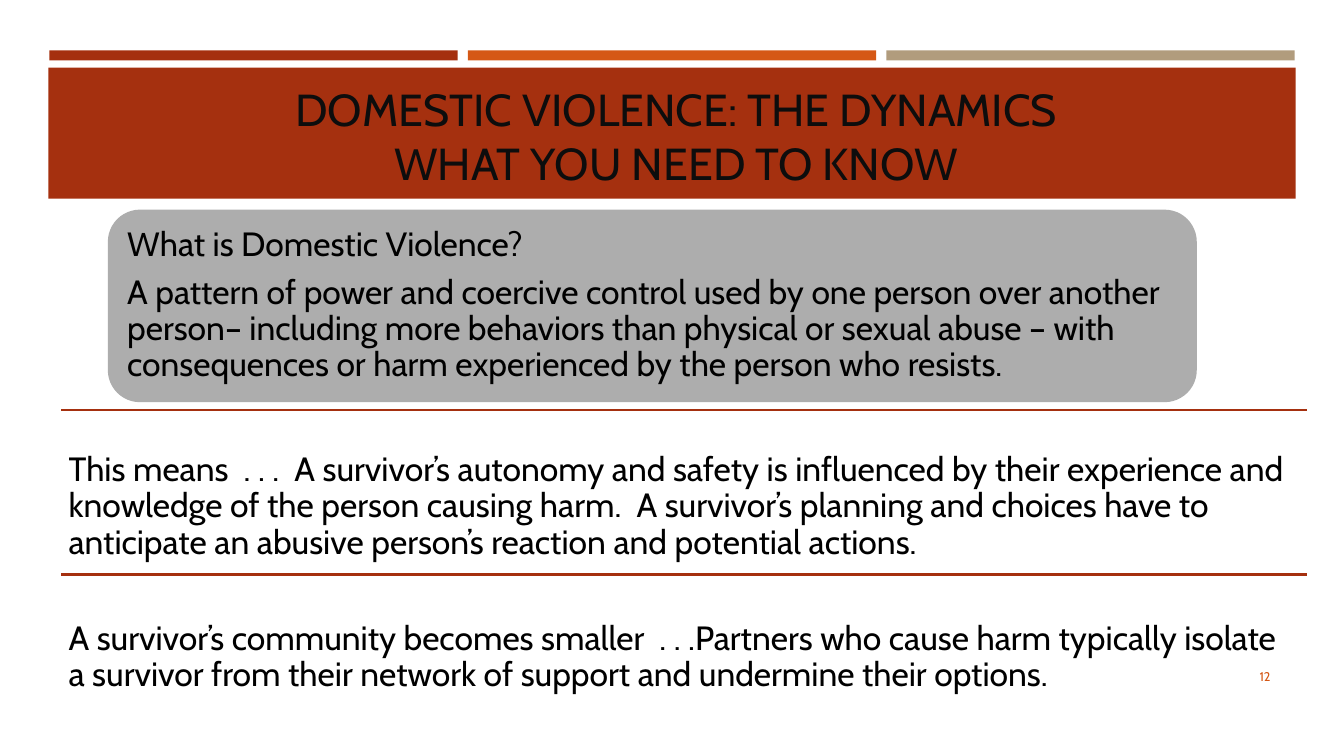
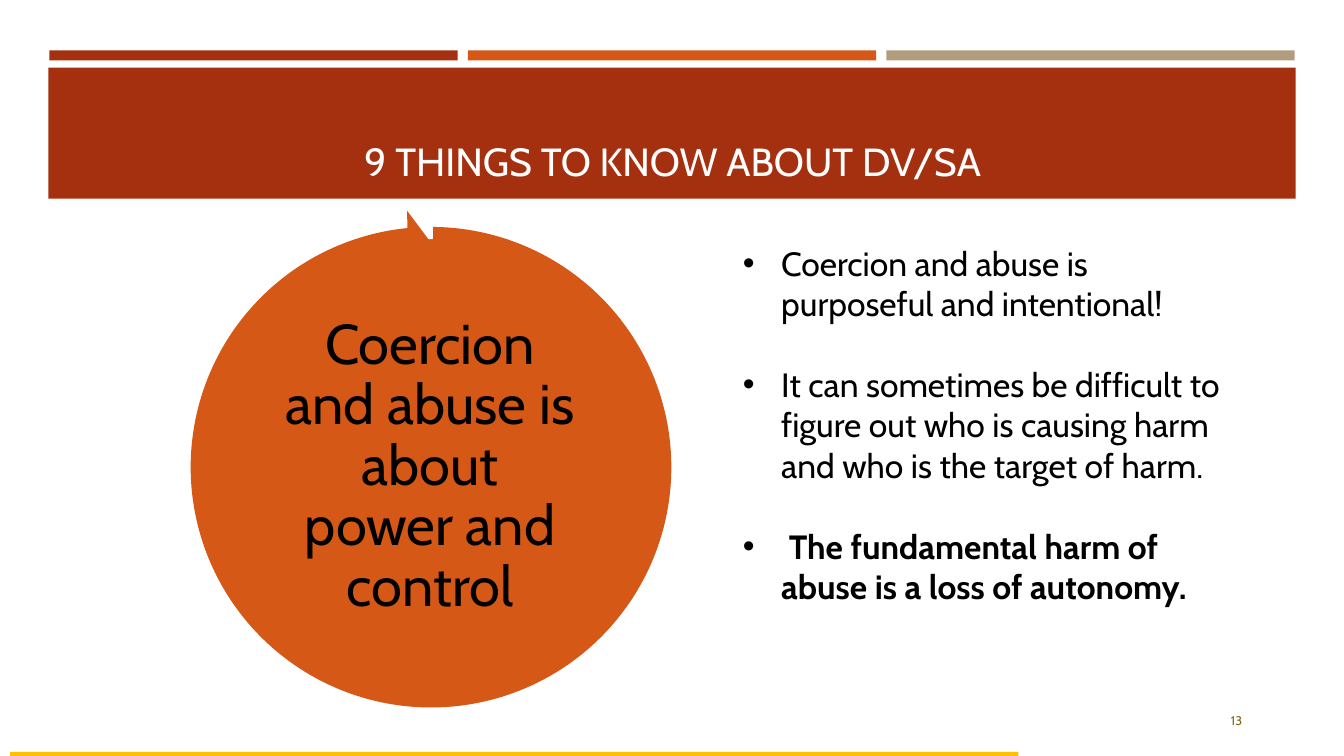
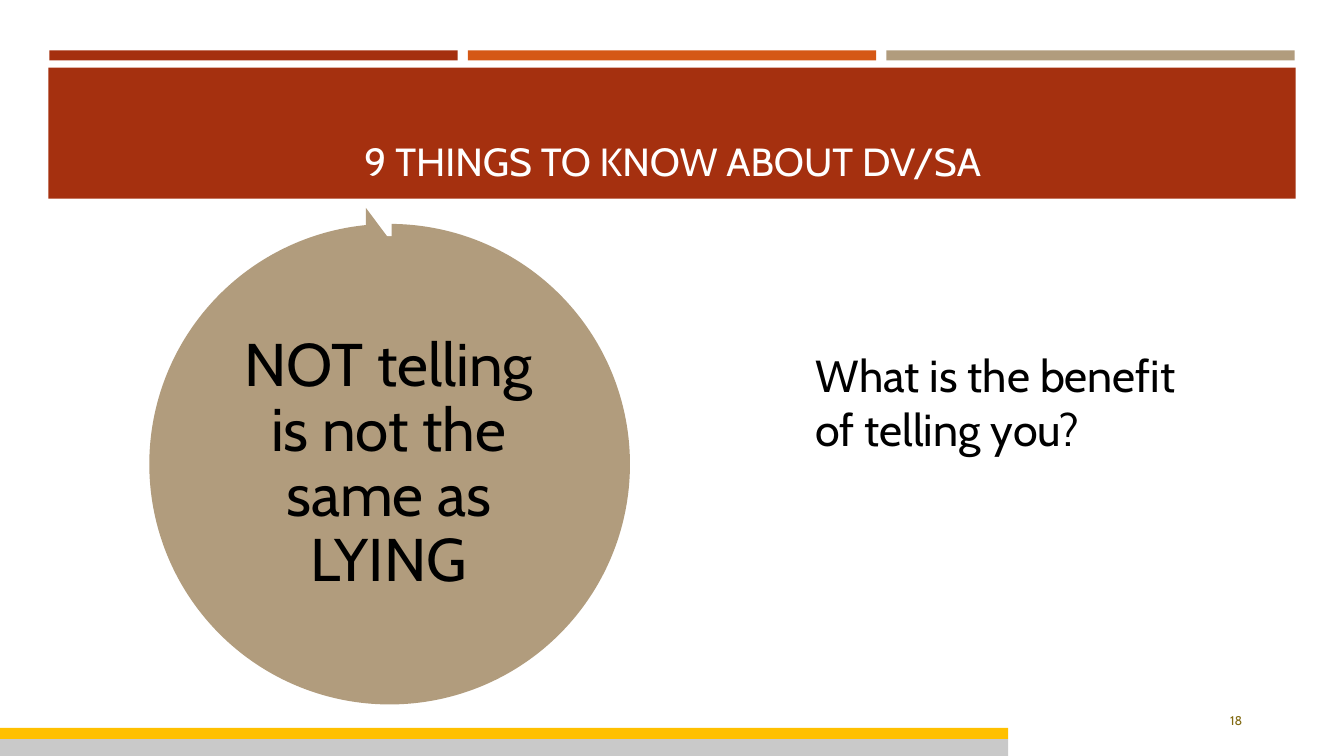
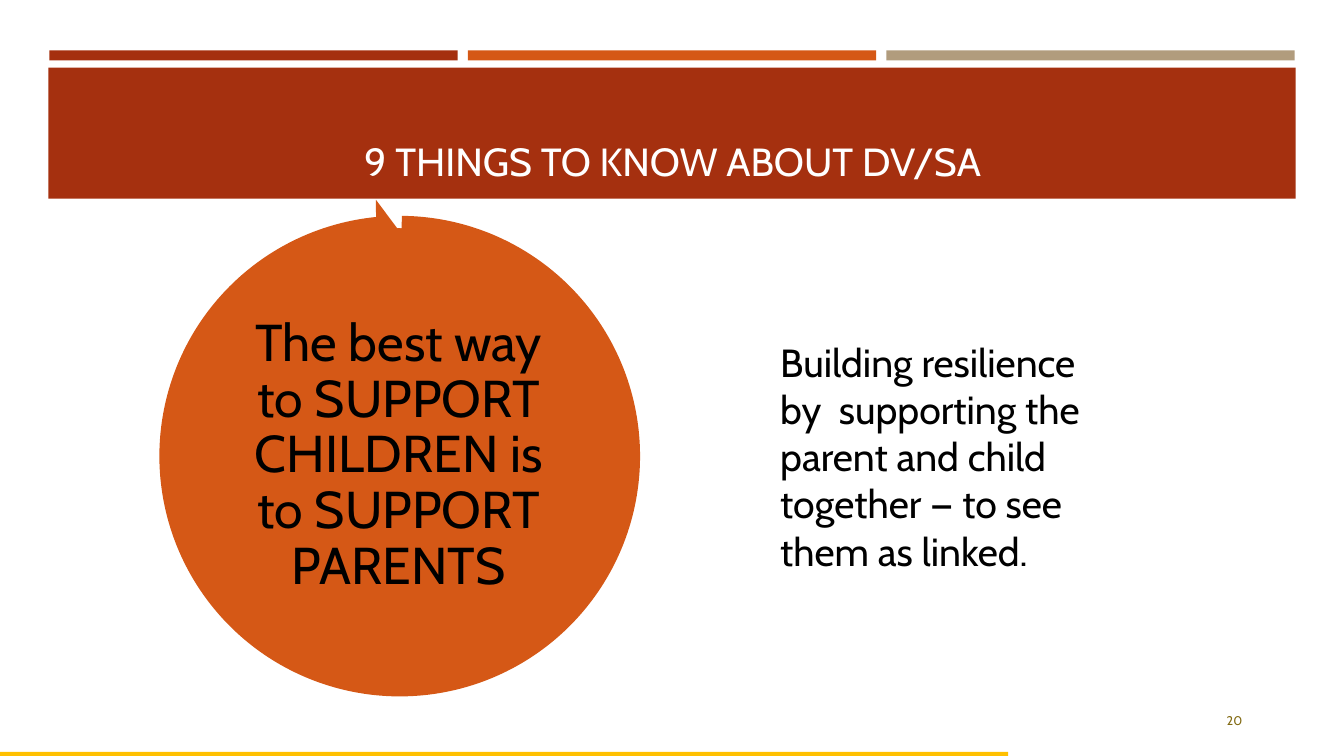
from dataclasses import dataclass

from pptx import Presentation
from pptx.dml.color import RGBColor as Rgb
from pptx.enum.shapes import MSO_CONNECTOR as Conn, MSO_SHAPE as Shape
from pptx.enum.text import MSO_ANCHOR as Anchor, PP_ALIGN as Align
from pptx.oxml.ns import qn
from pptx.util import Inches, Pt
from lxml.etree import SubElement as Sub


@dataclass(frozen=True)
class Theme:
    font: str = "Cabin"
    rust: str = "A5300F"
    orange: str = "D55816"
    tan: str = "B19C7D"
    gold: str = "FFC000"
    olive: str = "826A12"
    gray: str = "ADADAD"
    pale: str = "C9C9C9"
    white: str = "FFFFFF"
    ink: str = "0D0D0D"
    black: str = "000000"
    tiny: int = 9
    body: int = 24
    head: int = 28
    large: int = 32
    rule: float = 1.75
    tight: float = 0.9
    after: int = 8


T = Theme()


def write(frame, text, size=T.body, color=T.black, bold=False, align=Align.LEFT,
          lead=None, before=0, after=0, bullet=False):
    first = not frame.paragraphs[0].runs
    para = frame.paragraphs[0] if first else frame.add_paragraph()
    para.text = text
    para.alignment = align
    para.line_spacing = lead
    para.space_before = Pt(0 if first else before)
    para.space_after = Pt(after)
    if bullet:
        props = para._p.get_or_add_pPr()
        indent = Inches(0.38)
        props.set("marL", str(indent))
        props.set("indent", str(-indent))
        Sub(props, qn("a:buFont")).set("typeface", "Arial")
        Sub(props, qn("a:buChar")).set("char", "•")
    for run in para.runs:
        font = run.font
        font.name = T.font
        font.size = Pt(size)
        font.bold = bold
        font.color.rgb = Rgb.from_string(color)


class Deck:
    def __init__(self):
        self.prs = Presentation()
        self.prs.slide_width = Inches(13.33)
        self.prs.slide_height = Inches(7.5)
        self.slide = None

    def start(self, title, page, size=T.head, color=T.white,
              area=(0.64, 0.77, 12.06, 1.11), spot=(9.42, 6.95, 3, 0.4), tint=T.olive):
        self.slide = self.prs.slides.add_slide(self.prs.slide_layouts[6])
        for i, fill in enumerate((T.rust, T.orange, T.tan)):
            self.form((0.49 + 4.15 * i, 0.5, 4.05, 0.1), fill)
        self.form((0.48, 0.67, 12.37, 1.3), T.rust)
        write(self.box(area, Anchor.BOTTOM), title, size=size, color=color,
              align=Align.CENTER)
        write(self.box(spot, Anchor.MIDDLE), str(page), size=T.tiny, color=tint,
              align=Align.RIGHT)

    def form(self, area, fill, kind=Shape.RECTANGLE):
        shape = self.slide.shapes.add_shape(kind, *map(Inches, area))
        shape.shadow.inherit = False
        shape.fill.solid()
        shape.fill.fore_color.rgb = Rgb.from_string(fill)
        shape.line.fill.background()
        return shape

    def frame(self, shape, anchor, pad=None):
        frame = shape.text_frame
        frame.word_wrap = True
        frame.vertical_anchor = anchor
        if pad is not None:
            frame.margin_left = frame.margin_right = Inches(pad)
            frame.margin_top = frame.margin_bottom = Inches(pad)
        return frame

    def box(self, area, anchor=Anchor.TOP, pad=None):
        shape = self.slide.shapes.add_textbox(*map(Inches, area))
        return self.frame(shape, anchor, pad)

    def panel(self, area, lines):
        shape = self.form(area, T.gray, Shape.ROUNDED_RECTANGLE)
        frame = self.frame(shape, Anchor.MIDDLE, 0.1)
        for line in lines:
            write(frame, line, lead=T.tight, after=T.after)

    def rule(self, y):
        ends = map(Inches, (0.61, y, 12.96, y))
        line = self.slide.shapes.add_connector(Conn.STRAIGHT, *ends)
        line.line.color.rgb = Rgb.from_string(T.rust)
        line.line.width = Pt(T.rule)
        Sub(line._element.spPr, qn("a:effectLst"))

    def point(self, y, top, text):
        self.rule(y)
        write(self.box((0.61, top, 12.35, 1.25), pad=0.07), text, lead=T.tight)

    def bubble(self, x, y, text, size, fill):
        disc = self.form((x, y, 4.55, 4.55), fill, Shape.OVAL)
        disc.line.color.rgb = Rgb.from_string(T.white)
        disc.line.width = Pt(T.rule)
        write(self.frame(disc, Anchor.MIDDLE, 0.15), text, size=size,
              align=Align.CENTER, lead=T.tight, after=T.after)
        ring = self.form((x - 0.27, y - 0.28, 5.11, 5.11), fill, Shape.CIRCULAR_ARROW)
        for i, value in enumerate((0.051, 3.275, 158.427, 162.297, 0.059)):
            ring.adjustments[i] = value

    def strip(self, x, y, height, fill=T.gold):
        self.form((x, y, 10, height), fill)


def main():
    deck = Deck()
    topic = "9 THINGS TO KNOW ABOUT DV/SA"

    deck.start("DOMESTIC VIOLENCE: THE DYNAMICS\vWHAT YOU NEED TO KNOW", 12,
               size=T.large, color=T.ink, area=(2.61, 1, 8.2, 0.93),
               spot=(11.55, 6.51, 1.15, 0.4), tint=T.orange)
    deck.panel((1.07, 2.08, 10.8, 1.91), (
        "What is Domestic Violence?",
        "A pattern of power and coercive control used by one person over another "
        "person– including more behaviors than physical or sexual abuse – with "
        "consequences or harm experienced by the person who resists."))
    deck.point(4.07, 4.42,
               "This means  . . .  A survivor’s autonomy and safety is influenced by "
               "their experience and knowledge of the person causing harm.  A "
               "survivor’s planning and choices have to anticipate an abusive "
               "person’s reaction and potential actions.")
    deck.point(5.7, 6.09,
               "A survivor’s community becomes smaller  . . .Partners who cause harm "
               "typically isolate a survivor from their network of support and "
               "undermine their options.")

    deck.start(topic, 13)
    deck.bubble(1.99, 2.36, "Coercion and abuse is about power and control", 40, T.orange)
    notes = deck.box((7.27, 2.36, 5.15, 3.74))
    for text, bold in (
            ("Coercion and abuse is purposeful and intentional!", False),
            ("It can sometimes be difficult to figure out who is causing harm and "
             "who is the target of harm.", False),
            (" The fundamental harm of abuse is a loss of autonomy.", True)):
        write(notes, text, bold=bold, before=29, bullet=True)
    deck.strip(0.1, 7.46, 0.04)

    deck.start(topic, 18)
    deck.bubble(1.58, 2.33, "NOT telling is not the same as LYING", 43, T.tan)
    write(deck.box((7.99, 3.4, 3.86, 1.18)), "What is the benefit of telling you?",
          size=T.large)
    deck.strip(0, 7.33, 0.17, T.pale)
    deck.strip(0, 7.22, 0.11)

    deck.start(topic, 20)
    deck.bubble(1.68, 2.25, "The best way to SUPPORT CHILDREN is to SUPPORT PARENTS",
                37, T.orange)
    write(deck.box((7.64, 3.31, 3.56, 2.46)),
          "Building resilience by  supporting the parent and child together — to see "
          "them as linked.", size=T.head)
    deck.strip(0, 7.46, 0.04)

    deck.prs.save("out.pptx")


if __name__ == "__main__":
    main()
